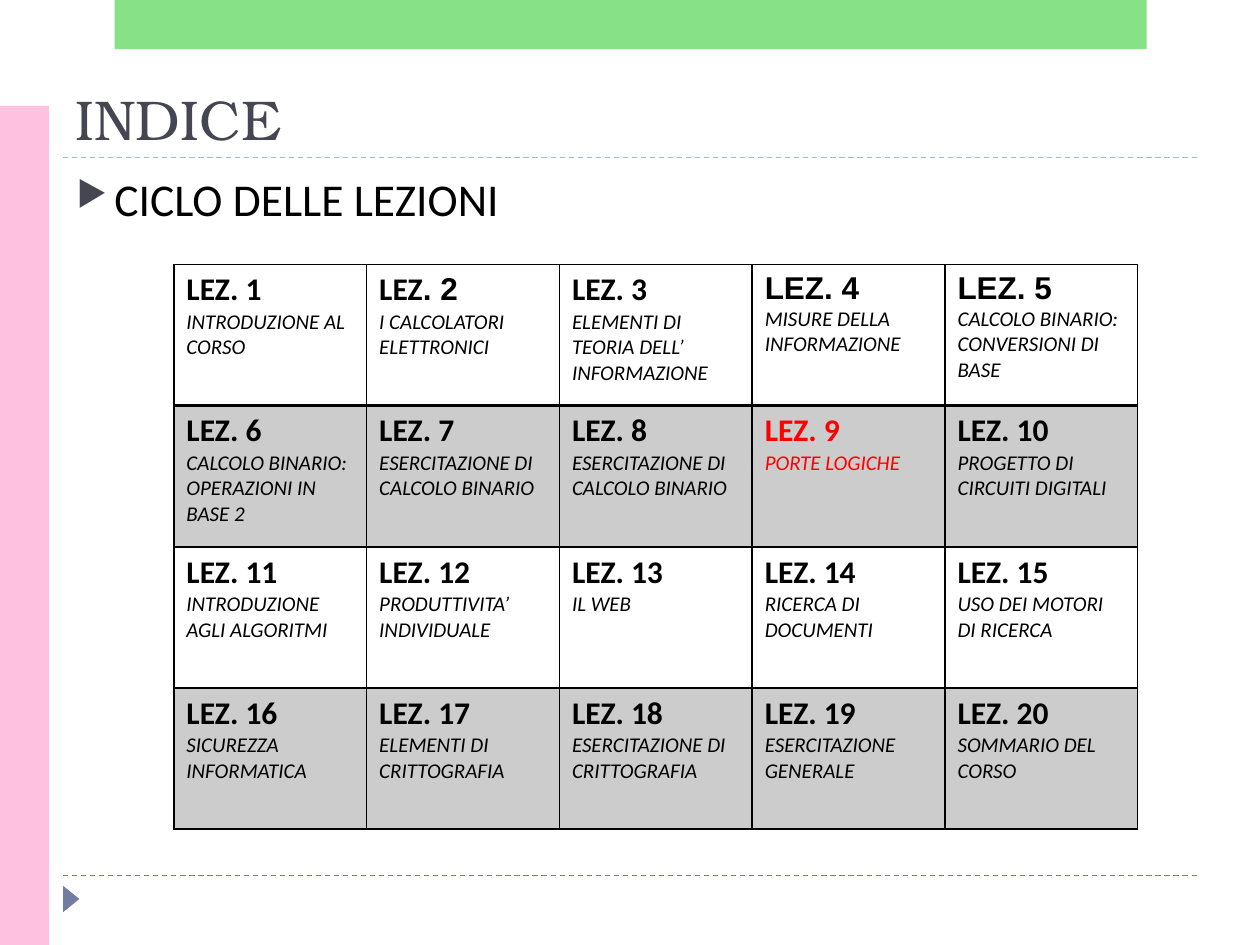
"""Build the course index slide with its table of lessons."""
from typing import NamedTuple, Optional

from lxml import etree
from pptx import Presentation
from pptx.dml.color import RGBColor
from pptx.enum.dml import MSO_LINE
from pptx.enum.shapes import MSO_CONNECTOR, MSO_SHAPE
from pptx.enum.text import MSO_ANCHOR
from pptx.oxml.ns import qn
from pptx.util import Inches, Pt

DASH = MSO_LINE.DASH
STRAIGHT = MSO_CONNECTOR.STRAIGHT
RECTANGLE = MSO_SHAPE.RECTANGLE
TRIANGLE = MSO_SHAPE.ISOSCELES_TRIANGLE
TOP = MSO_ANCHOR.TOP
BOTTOM = MSO_ANCHOR.BOTTOM

COLORS = {
    "black": "000000",
    "red": "FF0000",
    "slate": "464653",
    "blue": "727CA3",
    "light_blue": "9FB8CD",
    "pink": "FFC1E0",
    "green": "62D862",
}
BODY_FONT = "Calibri"
TITLE_FONT = "TeX Gyre Bonum"
COLUMNS = 5
COLUMN_WIDTH = 1.53
ROW_HEIGHT = 1.12


class Rule(NamedTuple):
    top: float
    color: str


class Block(NamedTuple):
    kind: int
    left: float
    top: float
    width: float
    height: float
    color: str
    opacity: int = 100
    rotation: int = 0


class Lesson(NamedTuple):
    topic: str
    color: str = "black"
    label_font: str = BODY_FONT
    number_font: Optional[str] = None


RULES = [Rule(6.95, "blue"), Rule(1.25, "light_blue")]
BLOCKS = [
    Block(TRIANGLE, 0.46, 7.07, 0.21, 0.13, "blue", rotation=90),
    Block(RECTANGLE, 0, 0.84, 0.39, 6.66, "pink"),
    Block(RECTANGLE, 0.91, 0, 8.19, 0.39, "green", opacity=76),
]
LESSONS = [
    Lesson("INTRODUZIONE AL CORSO"),
    Lesson("I CALCOLATORI\nELETTRONICI", number_font="Arial"),
    Lesson("ELEMENTI DI TEORIA DELL’\nINFORMAZIONE"),
    Lesson("MISURE DELLA INFORMAZIONE", label_font="Arial"),
    Lesson("CALCOLO BINARIO: CONVERSIONI DI BASE", label_font="Arial"),
    Lesson("CALCOLO BINARIO: OPERAZIONI IN BASE 2"),
    Lesson("ESERCITAZIONE DI CALCOLO BINARIO"),
    Lesson("ESERCITAZIONE DI CALCOLO BINARIO"),
    Lesson("PORTE LOGICHE", color="red"),
    Lesson("PROGETTO DI CIRCUITI DIGITALI"),
    Lesson("INTRODUZIONE AGLI ALGORITMI"),
    Lesson("PRODUTTIVITA’ INDIVIDUALE"),
    Lesson("IL WEB"),
    Lesson("RICERCA DI DOCUMENTI"),
    Lesson("USO DEI MOTORI DI RICERCA"),
    Lesson("SICUREZZA INFORMATICA"),
    Lesson("ELEMENTI DI CRITTOGRAFIA"),
    Lesson("ESERCITAZIONE DI CRITTOGRAFIA"),
    Lesson("ESERCITAZIONE GENERALE"),
    Lesson("SOMMARIO DEL CORSO"),
]


def rgb(name: str) -> RGBColor:
    return RGBColor.from_string(COLORS[name])


def set_fill(fill, properties, color: str, opacity: int = 100) -> None:
    fill.solid()
    fill.fore_color.rgb = rgb(color)
    if opacity < 100:
        tint = properties.find(qn("a:solidFill")).find(qn("a:srgbClr"))
        etree.SubElement(tint, qn("a:alpha"), val=str(opacity * 1000))


def set_font(font, name: str, size: int, color: str, bold=False, italic=False) -> None:
    font.name, font.size = name, Pt(size)
    font.bold, font.italic = bold, italic
    font.color.rgb = rgb(color)


def draw_rule(slide, rule: Rule) -> None:
    top = Inches(rule.top)
    line = slide.shapes.add_connector(STRAIGHT, Inches(0.5), top, Inches(9.5), top)
    line.line.color.rgb = rgb(rule.color)
    line.line.width = Pt(0.75)
    line.line.dash_style = DASH
    etree.SubElement(line._element.spPr, qn("a:effectLst"))


def draw_block(slide, block: Block) -> None:
    shape = slide.shapes.add_shape(
        block.kind, Inches(block.left), Inches(block.top),
        Inches(block.width), Inches(block.height))
    shape.shadow.inherit = False
    shape.rotation = block.rotation
    shape.line.fill.background()
    set_fill(shape.fill, shape._element.spPr, block.color, block.opacity)


def add_text(slide, text: str, left: float, top: float, height: float, anchor):
    box = slide.shapes.add_textbox(Inches(left), Inches(top), Inches(9), Inches(height))
    box.text_frame.word_wrap = True
    box.text_frame.vertical_anchor = anchor
    para = box.text_frame.paragraphs[0]
    para.text = text
    return para


def add_bullet(para) -> None:
    properties = para._p.get_or_add_pPr()
    properties.set("marL", str(Inches(0.3)))
    properties.set("indent", str(-Inches(0.3)))
    tint = etree.SubElement(properties, qn("a:buClr"))
    etree.SubElement(tint, qn("a:srgbClr"), val=COLORS["slate"])
    etree.SubElement(properties, qn("a:buSzPct"), val="76000")
    etree.SubElement(properties, qn("a:buChar"), char="▶")


def set_borders(cell, row: int) -> None:
    properties = cell._tc.get_or_add_tcPr()
    widths = {"L": 1, "R": 1, "T": 2 if row == 1 else 1, "B": 2 if row == 0 else 1}
    for side, width in widths.items():
        line = etree.SubElement(properties, qn(f"a:ln{side}"), w=str(Pt(width)))
        paint = etree.SubElement(line, qn("a:solidFill"))
        etree.SubElement(paint, qn("a:srgbClr"), val=COLORS["black"])


def fill_cell(cell, lesson: Lesson, number: int, row: int) -> None:
    set_borders(cell, row)
    if row % 2:
        set_fill(cell.fill, cell._tc.tcPr, "black", 20)
    else:
        cell.fill.background()
    heading = cell.text_frame.paragraphs[0]
    set_font(heading.font, lesson.label_font, 18, lesson.color, bold=True)
    for text, font in (("LEZ", lesson.label_font),
                       (f". {number}", lesson.number_font or lesson.label_font)):
        span = heading.add_run()
        span.text = text
        set_font(span.font, font, 18, lesson.color, bold=True)
    topic = cell.text_frame.add_paragraph()
    topic.text = lesson.topic
    set_font(topic.font, BODY_FONT, 12, lesson.color, italic=True)


def draw_lessons(slide) -> None:
    rows = len(LESSONS) // COLUMNS
    table = slide.shapes.add_table(
        rows, COLUMNS, Inches(1.38), Inches(2.1),
        Inches(COLUMN_WIDTH * COLUMNS), Inches(ROW_HEIGHT * rows)).table
    table.first_row = table.horz_banding = False
    for index, lesson in enumerate(LESSONS):
        row, column = divmod(index, COLUMNS)
        fill_cell(table.cell(row, column), lesson, index + 1, row)


def main() -> None:
    deck = Presentation()
    deck.slide_width, deck.slide_height = Inches(10), Inches(7.5)
    page = deck.slides.add_slide(deck.slide_layouts[6])
    for rule in RULES:
        draw_rule(page, rule)
    for block in BLOCKS:
        draw_block(page, block)
    title = add_text(page, "INDICE", 0.5, 0.55, 0.7, BOTTOM)
    set_font(title.font, TITLE_FONT, 32, "slate")
    subtitle = add_text(page, "CICLO DELLE LEZIONI", 0.51, 1.31, 0.79, TOP)
    add_bullet(subtitle)
    set_font(subtitle.font, BODY_FONT, 26, "black")
    draw_lessons(page)
    deck.save("out.pptx")


if __name__ == "__main__":
    main()
